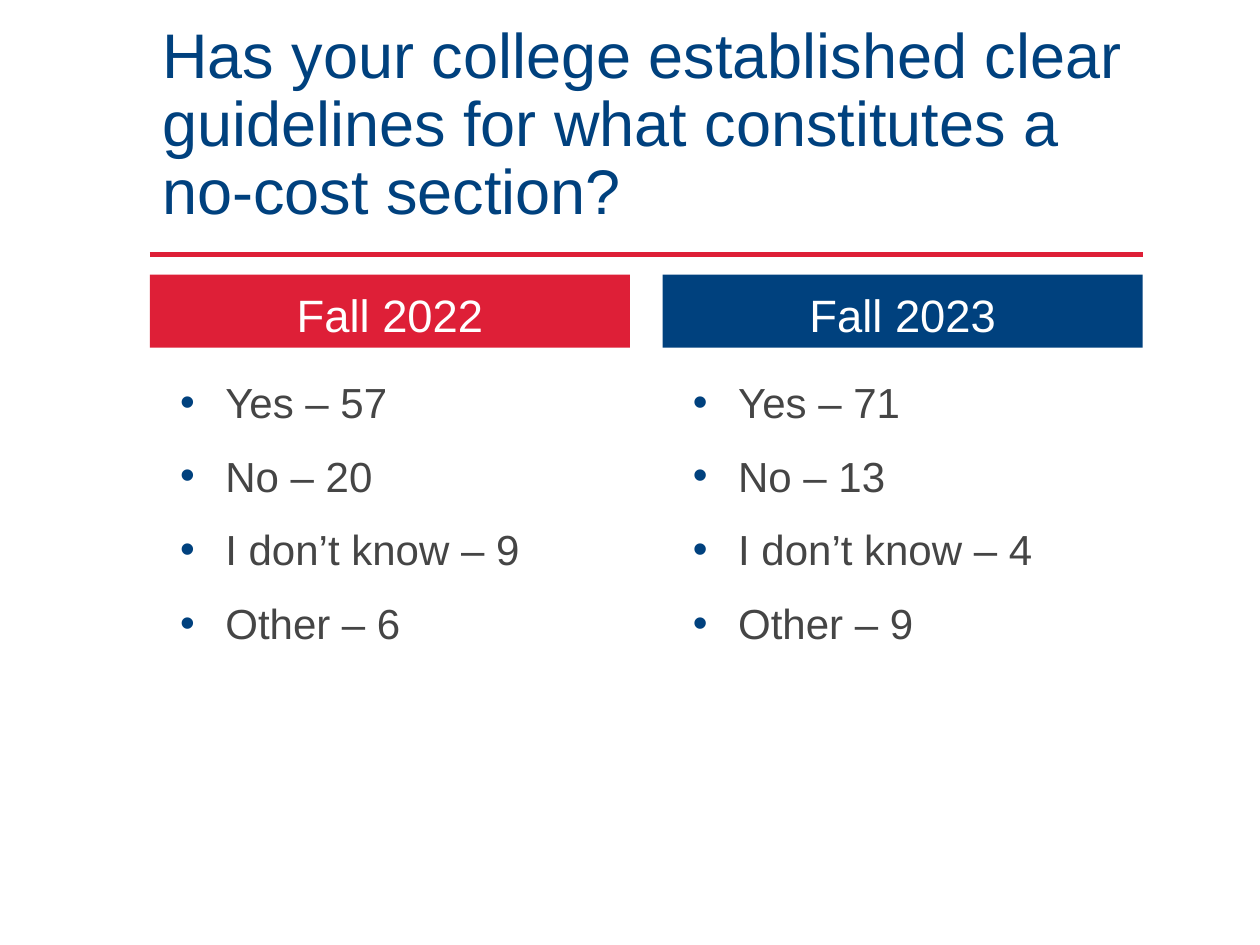
"""Build a slide comparing two years of survey answers on no-cost guidelines."""
from lxml import etree
from pptx import Presentation, util as u
from pptx.dml.color import RGBColor
from pptx.enum import shapes, text
from pptx.oxml import ns

COLORS = {"red": "DE1F37", "blue": "00417E", "grey": "454545", "white": "FFFFFF"}
FONT = "Arial"
TITLE = "Has your college established clear guidelines for what constitutes a no-cost section?"
COLUMNS = [
    ("Fall 2022", "red", [("Yes", 57), ("No", 20), ("I don’t know", 9), ("Other", 6)]),
    ("Fall 2023", "blue", [("Yes", 71), ("No", 13), ("I don’t know", 4), ("Other", 9)]),
]
LEFT, WIDTH, COLUMN_WIDTH = 1.19, 7.88, 3.81
COLUMN_STEP = WIDTH - COLUMN_WIDTH
RULE_Y = 2.02


def color(name):
    return RGBColor.from_string(COLORS[name])


def prepare_frame(box, anchor):
    frame = box.text_frame
    frame.word_wrap = True
    frame.auto_size = text.MSO_AUTO_SIZE.NONE
    frame.vertical_anchor = anchor
    return frame


def write(para, words, size, ink, line_spacing, before=0, align=text.PP_ALIGN.LEFT):
    para.alignment = align
    para.line_spacing = line_spacing
    para.space_before = u.Pt(before)
    span = para.add_run()
    span.text = words
    span.font.size = u.Pt(size)
    span.font.name = FONT
    span.font.color.rgb = color(ink)


def add_bullet(para, ink):
    props = para._p.get_or_add_pPr()
    props.set("marL", str(u.Inches(0.5)))
    props.set("indent", str(u.Inches(-0.36)))
    tint = etree.SubElement(props, ns.qn("a:buClr"))
    etree.SubElement(tint, ns.qn("a:srgbClr"), val=COLORS[ink])
    etree.SubElement(props, ns.qn("a:buFont"), typeface=FONT)
    etree.SubElement(props, ns.qn("a:buChar"), char="•")


def add_title(page):
    box = page.shapes.add_textbox(u.Inches(LEFT), u.Inches(0.88), u.Inches(WIDTH), u.Inches(0.98))
    frame = prepare_frame(box, text.MSO_ANCHOR.BOTTOM)
    write(frame.paragraphs[0], TITLE, 36, "blue", 0.9)


def add_rule(page):
    rule = page.shapes.add_connector(
        shapes.MSO_CONNECTOR.STRAIGHT,
        u.Inches(LEFT), u.Inches(RULE_Y), u.Inches(LEFT + WIDTH), u.Inches(RULE_Y))
    rule.line.color.rgb = color("red")
    rule.line.width = u.Pt(2.5)
    etree.SubElement(rule._element.spPr, ns.qn("a:effectLst"))


def add_column(page, left, heading, fill, answers):
    header = page.shapes.add_shape(
        shapes.MSO_SHAPE.RECTANGLE,
        u.Inches(left), u.Inches(2.18), u.Inches(COLUMN_WIDTH), u.Inches(0.58))
    header.shadow.inherit = False
    header.fill.solid()
    header.fill.fore_color.rgb = color(fill)
    header.line.fill.background()
    frame = prepare_frame(header, text.MSO_ANCHOR.BOTTOM)
    write(frame.paragraphs[0], heading, 25.9, "white", 0.8, 7.5, text.PP_ALIGN.CENTER)

    box = page.shapes.add_textbox(
        u.Inches(left), u.Inches(2.86), u.Inches(COLUMN_WIDTH), u.Inches(3.75))
    frame = prepare_frame(box, text.MSO_ANCHOR.TOP)
    for index, (answer, count) in enumerate(answers):
        para = frame.add_paragraph() if index else frame.paragraphs[0]
        write(para, f"{answer} – {count}", 24, "grey", 1.2, 7.5)
        add_bullet(para, "blue")


def main():
    deck = Presentation()
    deck.slide_width, deck.slide_height = u.Inches(10), u.Inches(7.5)
    page = deck.slides.add_slide(deck.slide_layouts[6])
    add_rule(page)
    add_title(page)
    for index, column in enumerate(COLUMNS):
        add_column(page, LEFT + index * COLUMN_STEP, *column)
    deck.save("out.pptx")


if __name__ == "__main__":
    main()
